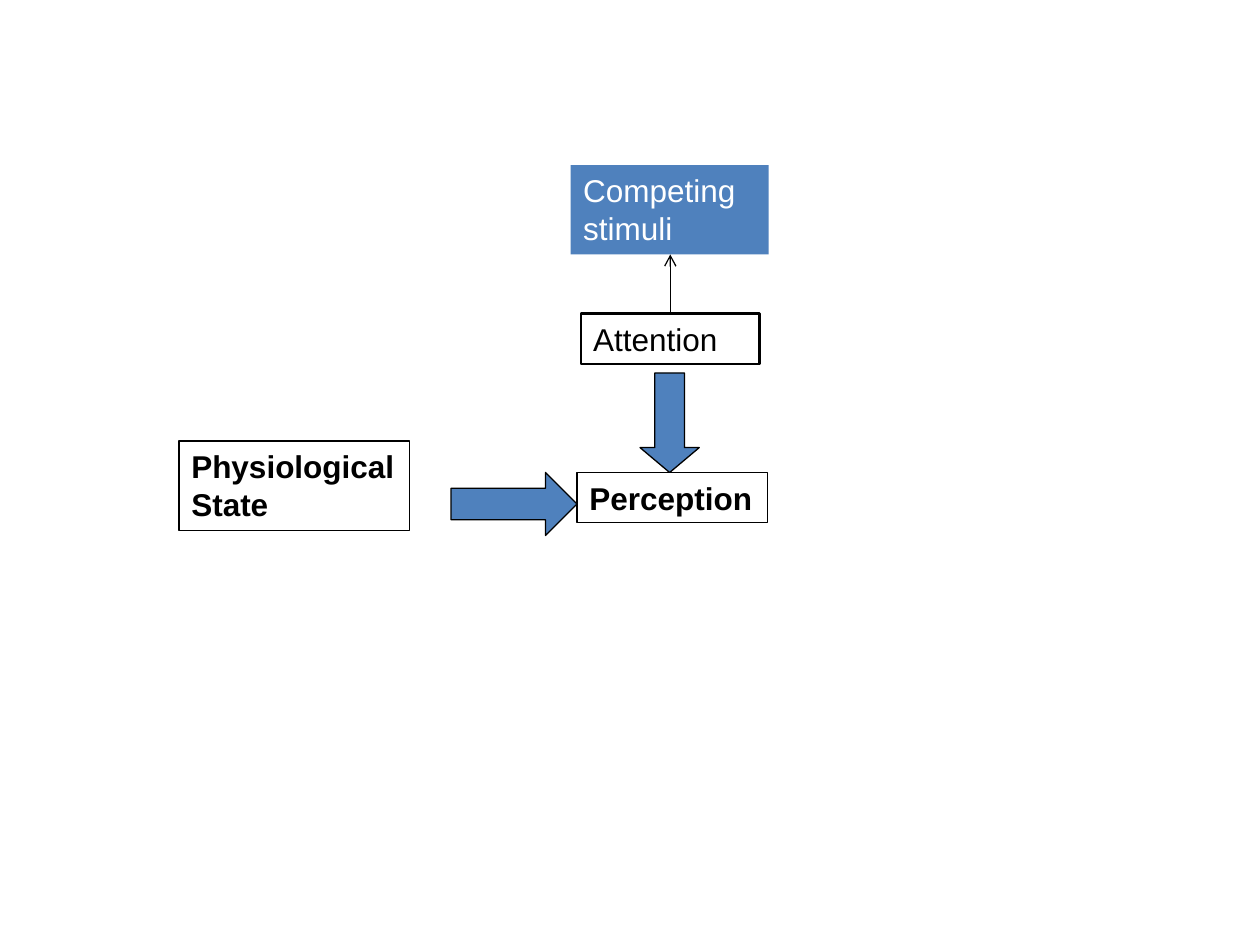
"""Build a slide showing what shapes perception."""
from lxml.etree import SubElement
from pptx import Presentation
from pptx.dml.color import RGBColor
from pptx.enum.shapes import MSO_CONNECTOR, MSO_SHAPE
from pptx.enum.text import MSO_AUTO_SIZE
from pptx.oxml.ns import qn
from pptx.util import Inches, Pt

COLORS = {"ink": "000000", "accent": "4F81BD", "paper": "FFFFFF"}


class Diagram:
    """Holds the style and the current slide of a box-and-arrow diagram."""

    font = {"name": "Arial", "size": Pt(18)}

    def __init__(self, slide):
        self.slide = slide

    def color(self, name):
        """Return the named colour."""
        return RGBColor.from_string(COLORS[name])

    def outline(self, line, width):
        """Draw a line in ink at the given point width."""
        line.color.rgb = self.color("ink")
        line.width = Pt(width)

    def box(self, lines, place, ink="ink", fill=None, border=0.75, bold=False, wrap=True):
        """Add a text box with one paragraph for each line."""
        label = self.slide.shapes.add_textbox(*map(Inches, place))
        if fill:
            label.fill.solid()
            label.fill.fore_color.rgb = self.color(fill)
        if border:
            self.outline(label.line, border)
        frame = label.text_frame
        frame.text = "\n".join(lines)
        frame.word_wrap = wrap
        frame.auto_size = MSO_AUTO_SIZE.SHAPE_TO_FIT_TEXT
        for paragraph in frame.paragraphs:
            for run in paragraph.runs:
                for key, value in {**self.font, "bold": bold}.items():
                    setattr(run.font, key, value)
                run.font.color.rgb = self.color(ink)

    def block_arrow(self, kind, place, head):
        """Add a filled block arrow with the given head proportion."""
        arrow = self.slide.shapes.add_shape(kind, *map(Inches, place))
        arrow.shadow.inherit = False
        arrow.adjustments[0], arrow.adjustments[1] = 0.5, head
        arrow.fill.solid()
        arrow.fill.fore_color.rgb = self.color("accent")
        self.outline(arrow.line, 0.75)

    def thin_arrow(self, start, end):
        """Add a thin line with an open head at its end."""
        link = self.slide.shapes.add_connector(
            MSO_CONNECTOR.STRAIGHT, *map(Inches, (*start, *end)))
        self.outline(link.line, 0.75)
        SubElement(link.line._get_or_add_ln(), qn("a:tailEnd"), type="arrow")
        SubElement(link._element.spPr, qn("a:effectLst"))


def main():
    """Build and save the slide."""
    deck = Presentation()
    deck.slide_width, deck.slide_height = Inches(10), Inches(7.5)
    diagram = Diagram(deck.slides.add_slide(deck.slide_layouts[6]))
    diagram.box(["Perception"], (4.58, 3.75, 1.51, 0.4), bold=True, wrap=False)
    diagram.box(["Physiological", "State"], (1.42, 3.5, 1.83, 0.71), bold=True, wrap=False)
    diagram.block_arrow(MSO_SHAPE.RIGHT_ARROW, (3.58, 3.75, 1, 0.5), 0.5)
    diagram.box(["Attention"], (4.61, 2.49, 1.42, 0.4), border=1.5)
    diagram.block_arrow(MSO_SHAPE.DOWN_ARROW, (5.08, 2.96, 0.47, 0.79), 0.42)
    diagram.box(["Competing stimuli"], (4.53, 1.31, 1.57, 0.71),
                ink="paper", fill="accent", border=0)
    diagram.thin_arrow((5.32, 2.49), (5.32, 2.02))
    deck.save("out.pptx")


if __name__ == "__main__":
    main()
